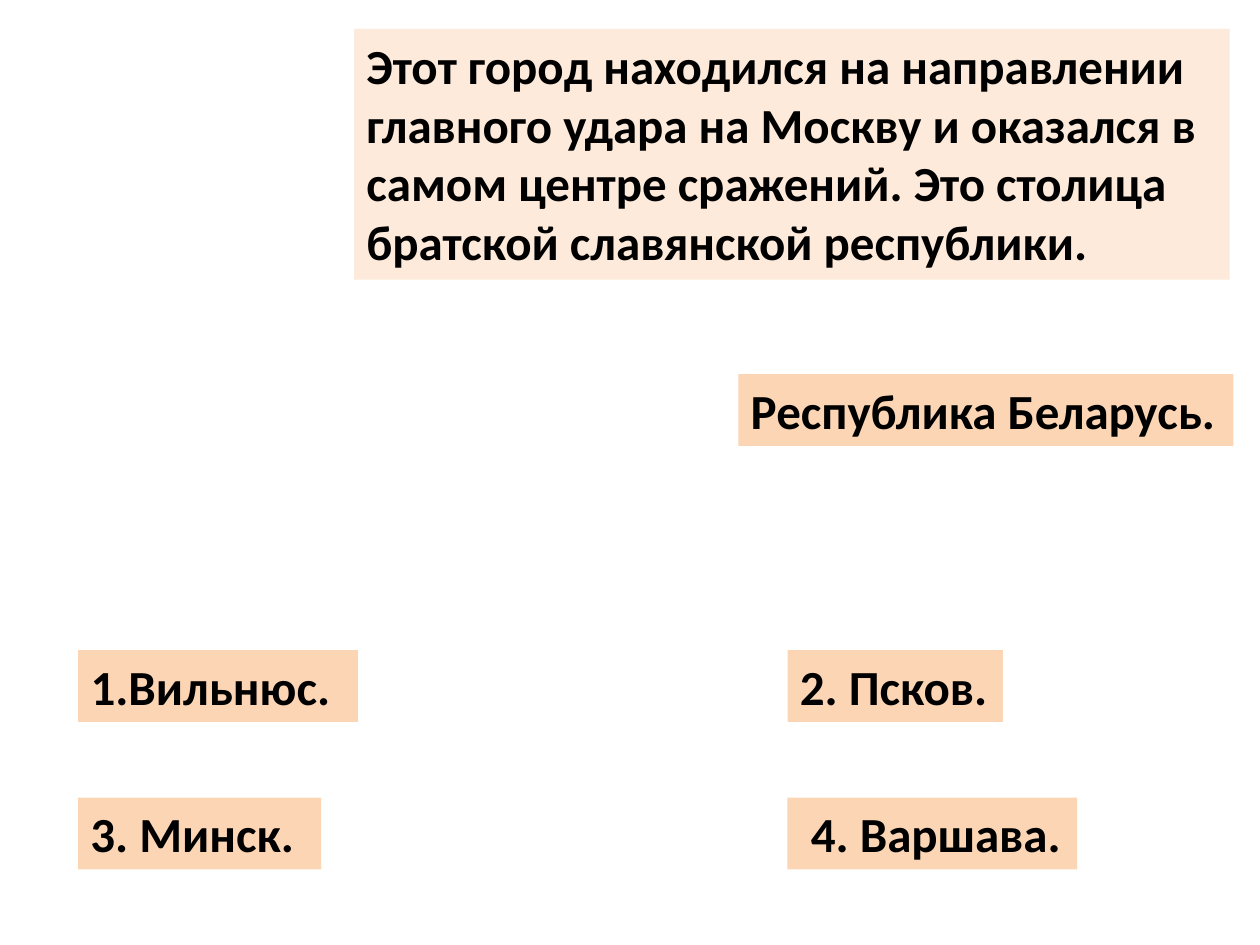
from dataclasses import dataclass

from pptx import Presentation
from pptx.dml.color import RGBColor
from pptx.enum.text import MSO_ANCHOR, MSO_AUTO_SIZE, PP_ALIGN
from pptx.util import Pt

EMU_PER_PX = 9144  # 100 px to the inch


@dataclass(frozen=True)
class Theme:
    font: str = "Calibri"
    size: int = 28
    ink: str = "000000"
    question_fill: str = "FDEADA"
    label_fill: str = "FCD5B5"


THEME = Theme()
LABEL_HEIGHT = 57


def px(length):
    return round(length * EMU_PER_PX)


def add_text(slide, text, box, *, fill, size=THEME.size, bold=True, color=THEME.ink):
    """Add a filled text box; box is left, top, width, height in px."""
    shape = slide.shapes.add_textbox(*map(px, box))
    shape.fill.solid()
    shape.fill.fore_color.rgb = RGBColor.from_string(fill)
    frame = shape.text_frame
    frame.word_wrap = True
    frame.auto_size = MSO_AUTO_SIZE.NONE
    frame.vertical_anchor = MSO_ANCHOR.TOP
    paragraph = frame.paragraphs[0]
    paragraph.alignment = PP_ALIGN.LEFT
    run = paragraph.add_run()
    run.text = text
    run.font.name = THEME.font
    run.font.size = Pt(size)
    run.font.bold = bold
    run.font.color.rgb = RGBColor.from_string(color)
    return shape


def add_question(slide, box, text):
    add_text(slide, text, box, fill=THEME.question_fill)


def add_label(slide, left, top, width, text):
    add_text(slide, text, (left, top, width, LABEL_HEIGHT), fill=THEME.label_fill)


def add_answers(slide, box, answers, columns=2):
    """Set the answers in a grid whose last row ends at the foot of the box."""
    left, top, width, height = box
    rows = len(answers) // columns
    column_step = width / columns
    row_step = (height - LABEL_HEIGHT) / (rows - 1)
    for index, (text, label_width) in enumerate(answers):
        row, column = divmod(index, columns)
        add_label(slide, left + column * column_step, top + row * row_step,
                  label_width, text)


def main():
    presentation = Presentation()
    presentation.slide_width, presentation.slide_height = px(1000), px(750)
    slide = presentation.slides.add_slide(presentation.slide_layouts[6])

    # Question
    add_question(
        slide, (281, 23, 695, 199),
        "Этот город находился на направлении главного удара на Москву и оказался "
        "в самом центре сражений. Это столица братской славянской республики.")

    # Country
    add_label(slide, 586, 297, 393, "Республика Беларусь.")

    # Answers, each with the width of its label
    add_answers(slide, (62, 516, 1126, 174), [
        ("1.Вильнюс.", 222), ("2. Псков.", 171),
        ("3. Минск.", 193), (" 4. Варшава.", 230),
    ])

    presentation.save("out.pptx")


if __name__ == "__main__":
    main()
